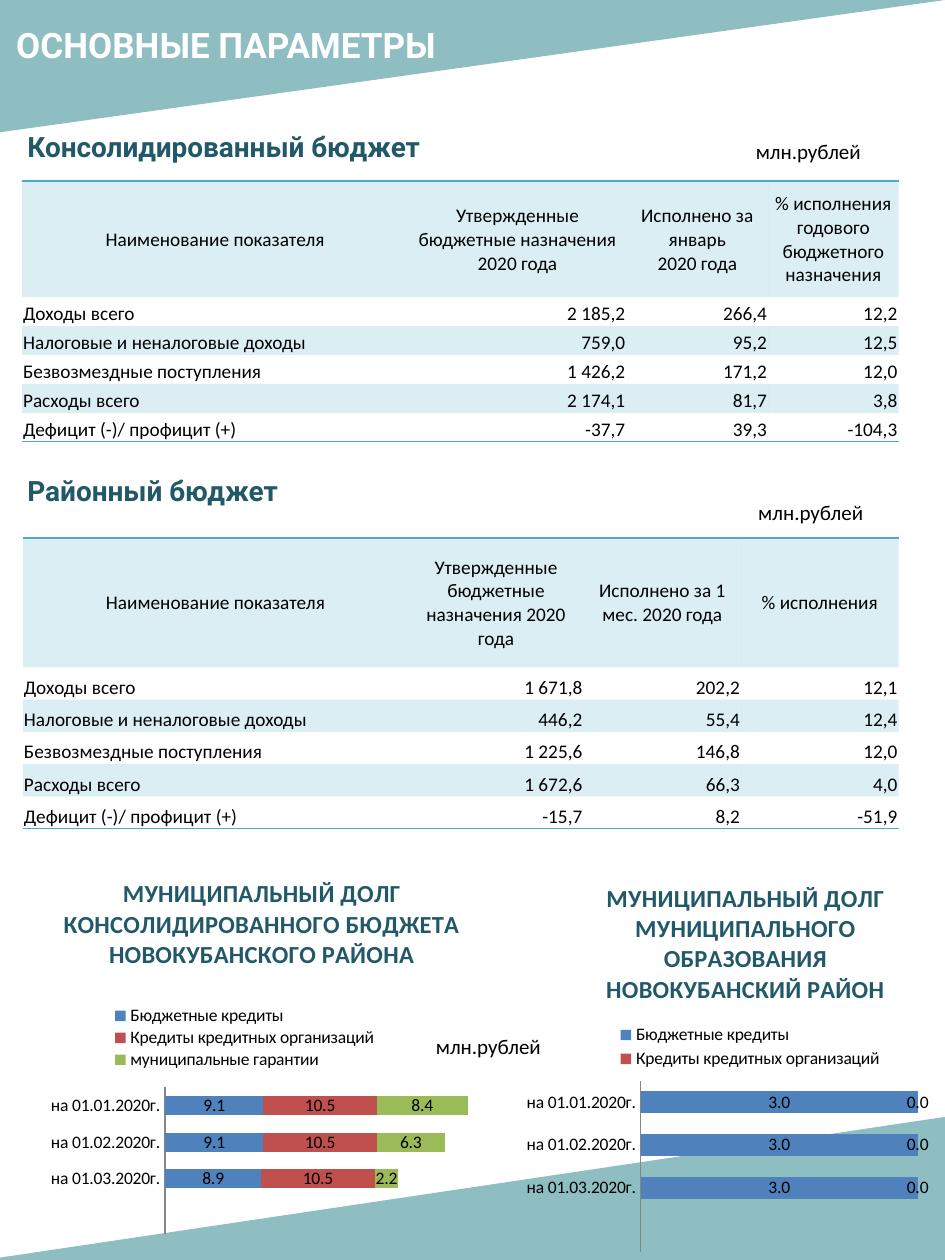
from lxml import etree
from pptx import Presentation
from pptx.chart.data import CategoryChartData as Data
from pptx.dml.color import RGBColor
from pptx.enum.chart import XL_CHART_TYPE as Kind, XL_LEGEND_POSITION as Side, XL_TICK_MARK as Tick
from pptx.enum.shapes import MSO_SHAPE as Form
from pptx.enum.text import MSO_ANCHOR as Anchor, MSO_AUTO_SIZE as Auto, PP_ALIGN as Align
from pptx.oxml import parse_xml
from pptx.oxml.ns import nsdecls, qn
from pptx.util import Pt

TEAL = RGBColor(0x51, 0x9A, 0xA0)
DEEP = RGBColor(0x21, 0x59, 0x68)
AQUA = RGBColor(0x4B, 0xAC, 0xC6)
WHITE = RGBColor(0xFF, 0xFF, 0xFF)
BLACK = RGBColor(0, 0, 0)
GREY = RGBColor(0x86, 0x86, 0x86)
HUES = [RGBColor(0x4F, 0x81, 0xBD), RGBColor(0xC0, 0x50, 0x4D), RGBColor(0x9B, 0xBB, 0x59)]

HERO = dict(name="Roboto", size=Pt(20), bold=True, color=WHITE)
HEAD = dict(name="Roboto", size=Pt(16), bold=True, color=DEEP)
UNIT = dict(name="Calibri", size=Pt(12), color=BLACK)
BODY = dict(name="Calibri", size=Pt(11), color=BLACK)
TINY = dict(name="Calibri", size=Pt(10), color=BLACK)
NAME = dict(name="Calibri", size=Pt(14), bold=True, color=DEEP)

PLAIN = "{2D5ABB26-0587-4C30-8999-92F81FD0307C}"
ROWS = ["Доходы всего", "Налоговые и неналоговые доходы", "Безвозмездные поступления",
        "Расходы всего", "Дефицит (-)/ профицит (+)"]
FIRST = "Наименование показателя"
TOTAL = [
    [FIRST, "Утвержденные бюджетные назначения\n2020 года", "Исполнено за январь\n2020 года",
     "% исполнения годового бюджетного назначения"],
    ["2 185,2", "266,4", "12,2"], ["759,0", "95,2", "12,5"], ["1 426,2", "171,2", "12,0"],
    ["2 174,1", "81,7", "3,8"], ["-37,7", "39,3", "-104,3"]]
LOCAL = [
    [FIRST, "Утвержденные бюджетные назначения 2020 года", "Исполнено за 1 мес. 2020 года",
     "% исполнения"],
    ["1 671,8", "202,2", "12,1"], ["446,2", "55,4", "12,4"], ["1 225,6", "146,8", "12,0"],
    ["1 672,6", "66,3", "4,0"], ["-15,7", "8,2", "-51,9"]]

DATES = ["на 01.01.2020г.", "на 01.02.2020г.", "на 01.03.2020г.", ""]
LOAN, BANK = "Бюджетные кредиты", "Кредиты кредитных организаций"
JOINT = {LOAN: [9.1, 9.1, 8.9, None], BANK: [10.5, 10.5, 10.5, None],
         "муниципальные гарантии": [8.4, 6.3, 2.2, None]}
OWN = {LOAN: [3, 3, 3, None], BANK: [0, 0, 0, None]}


def style(font, look):
    """Apply a dict of format values to a font."""
    for key, val in look.items():
        if key == "color":
            font.color.rgb = val
        else:
            setattr(font, key, val)


def fade(fill, hue, part):
    """Fill with a colour at the given opacity in percent."""
    fill.solid()
    fill.fore_color.rgb = hue
    tone = fill._xPr.find(".//" + qn("a:srgbClr"))
    etree.SubElement(tone, qn("a:alpha")).set("val", str(part * 1000))


def wedge(slide, box, flip):
    """Draw a turned and flipped right triangle."""
    shape = slide.shapes.add_shape(Form.RIGHT_TRIANGLE, *map(Pt, box))
    shape.shadow.inherit = False
    shape.rotation = 180
    shape._element.spPr.xfrm.set(flip, "1")
    shape.line.fill.background()
    fade(shape.fill, TEAL, 64)


def label(slide, box, text, look, wrap=True):
    """Place one line of text."""
    frame = slide.shapes.add_textbox(*map(Pt, box)).text_frame
    frame.word_wrap = wrap
    frame.auto_size = Auto.SHAPE_TO_FIT_TEXT
    frame.text = text
    style(frame.paragraphs[0].runs[0].font, look)


def edge(cell, side):
    """Rule one side of a cell."""
    line = parse_xml(f'<a:{side} {nsdecls("a")} w="12700"><a:solidFill>'
                     f'<a:srgbClr val="{AQUA}"/></a:solidFill></a:{side}>')
    cell._tc.get_or_add_tcPr().insert(0, line)


def fill_cell(cell, text, row, col):
    """Write and format one table cell."""
    cell.text = text
    form = dict(margin_left=Pt(0.7), margin_right=Pt(0.7), margin_top=Pt(0.7), margin_bottom=0,
                vertical_anchor=Anchor.BOTTOM if row else Anchor.MIDDLE)
    for key, val in form.items():
        setattr(cell, key, val)
    for para in cell.text_frame.paragraphs:
        para.alignment = Align.CENTER if not row else Align.RIGHT if col else Align.LEFT
        for run in para.runs:
            style(run.font, BODY)
    if row % 2 and row or row == 4 - 4 + 5:
        cell.fill.background()
    else:
        fade(cell.fill, AQUA, 20)


def grid(slide, box, cols, top, rows):
    """Build a banded budget table with a tall header."""
    count = len(rows)
    table = slide.shapes.add_table(count, len(cols), *map(Pt, box)).table
    table._tbl.tblPr.find(qn("a:tableStyleId")).text = PLAIN
    for col, width in zip(table.columns, cols):
        col.width = Pt(width)
    for row, line in enumerate(rows):
        table.rows[row].height = Pt(top if row == 0 else (box[3] - top) / (count - 1))
        for col, text in enumerate([ROWS[row - 1], *line] if row else line):
            cell = table.cell(row, col)
            fill_cell(cell, text, row, col)
            if row in (0, count - 1):
                edge(cell, "lnB" if row else "lnT")


def layout(node, prior, spot, inner=False):
    """Give a chart part a manual place in fractions of the chart."""
    for old in node.findall(qn("c:layout")):
        node.remove(old)
    new = parse_xml(f'<c:layout {nsdecls("c")}><c:manualLayout/></c:layout>')
    parts = [("layoutTarget", "inner")] if inner else []
    parts += [("xMode", "edge"), ("yMode", "edge"), *zip("xywh", spot)]
    for tag, val in parts:
        etree.SubElement(new[0], qn("c:" + tag)).set("val", str(val))
    if prior:
        node.find(qn(prior)).addnext(new)
    else:
        node.insert(0, new)


def debt(slide, box, title, sets, peak, plot, key, spot=None):
    """Build a stacked bar chart of debt by date."""
    data = Data(number_format="#,##0.0")
    data.categories = DATES
    for name, vals in sets.items():
        data.add_series(name, vals)
    chart = slide.shapes.add_chart(Kind.BAR_STACKED, *map(Pt, box), data).chart
    style(chart.font, TINY)
    chart.has_title = chart.has_legend = True
    chart.chart_title.text_frame.text = title
    style(chart.chart_title.text_frame.paragraphs[0].runs[0].font, NAME)
    chart.legend.position = Side.TOP
    chart.legend.include_in_layout = False
    dates, scale, bars = chart.category_axis, chart.value_axis, chart.plots[0]
    forms = [(dates, dict(reverse_order=True, major_tick_mark=Tick.NONE)),
             (scale, dict(visible=False, has_major_gridlines=False,
                          minimum_scale=0, maximum_scale=peak)),
             (bars, dict(gap_width=95, overlap=100, vary_by_categories=False))]
    for part, form in forms:
        for name, val in form.items():
            setattr(part, name, val)
    dates.format.line.color.rgb = GREY
    for band, hue in zip(bars.series, HUES):
        band.format.fill.solid()
        band.format.fill.fore_color.rgb = hue
        form = dict(show_value=True, number_format="#,##0.0", number_format_is_linked=False)
        for name, val in form.items():
            setattr(band.data_labels, name, val)
    layout(chart._chartSpace.chart.plotArea, None, plot, True)
    layout(chart.legend._element, "c:legendPos", key)
    if spot:
        layout(chart.chart_title._element, "c:tx", spot)


def main():
    """Build the budget slide."""
    deck = Presentation()
    deck.slide_width, deck.slide_height = Pt(540), Pt(720)
    slide = deck.slides.add_slide(deck.slide_layouts[6])
    wedge(slide, (0, 0, 540, 75.6), "flipH")
    wedge(slide, (-9.4, 638, 550.8, 82), "flipV")
    label(slide, (2.2, 10, 350.6, 31.5), "ОСНОВНЫЕ ПАРАМЕТРЫ", HERO)
    grid(slide, (12.5, 103.5, 501, 149), (221, 124.5, 81, 74.5), 66.3, TOTAL)
    label(slide, (8.6, 70.6, 350.6, 26.6), "Консолидированный бюджет", HEAD)
    label(slide, (8.6, 267, 350.6, 26.6), "Районный бюджет", HEAD)
    grid(slide, (13, 307.3, 500.5, 166.3), (220.4, 100.1, 90, 90), 74, LOCAL)
    for left, top in ((424.8, 75.6), (426.2, 282.2), (242, 586.8)):
        label(slide, (left, top, 77, 21.6), "млн.рублей", UNIT, False)
    debt(slide, (-11.5, 489.6, 378, 216),
         "МУНИЦИПАЛЬНЫЙ ДОЛГ КОНСОЛИДИРОВАННОГО БЮДЖЕТА НОВОКУБАНСКОГО РАЙОНА",
         JOINT, 30, (0.28, 0.61, 0.49, 0.39), (0.19, 0.39, 0.42, 0.18), (0.12, 0.04))
    debt(slide, (296, 492.5, 260, 227.5),
         "МУНИЦИПАЛЬНЫЙ ДОЛГ МУНИЦИПАЛЬНОГО ОБРАЗОВАНИЯ НОВОКУБАНСКИЙ РАЙОН",
         OWN, 3.5, (0.27, 0.55, 0.71, 0.43), (0.21, 0.4, 0.6, 0.13))


    deck.save("out.pptx")


if __name__ == "__main__":
    main()
